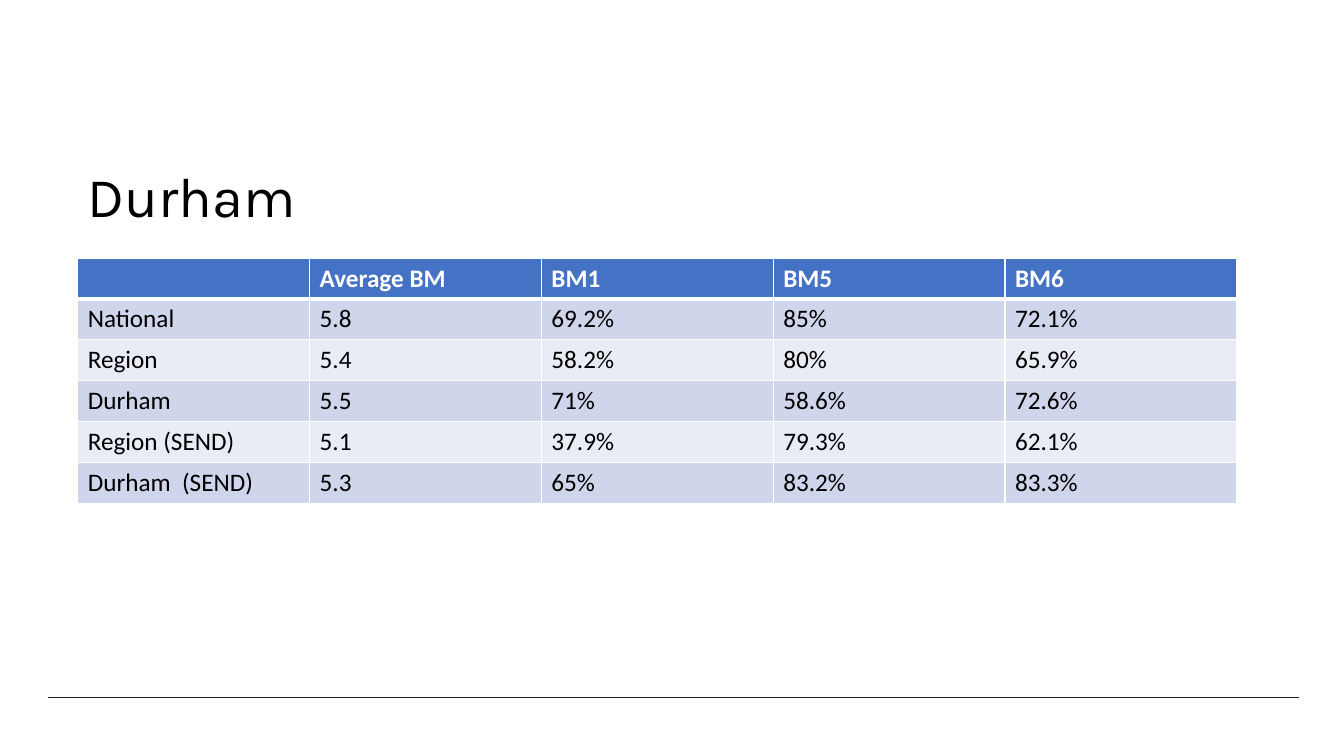
from lxml.etree import SubElement
from pptx import Presentation
from pptx.dml.color import RGBColor
from pptx.enum.shapes import MSO_CONNECTOR as Connector
from pptx.enum.text import MSO_ANCHOR as Anchor, PP_ALIGN as Align
from pptx.oxml.ns import qn
from pptx.util import Cm, Pt

BLACK = RGBColor(0x00, 0x00, 0x00)
WHITE = RGBColor(0xFF, 0xFF, 0xFF)
RULE = RGBColor(0x23, 0x1F, 0x20)
HEADER_FILL = RGBColor(0x44, 0x72, 0xC4)
BAND_FILLS = (RGBColor(0xE9, 0xEB, 0xF5), RGBColor(0xCF, 0xD5, 0xEA))

LEFT, CONTENT_WIDTH = Cm(1.96), Cm(29.21)
ROW_HEIGHT = Cm(1.03)

RESULTS = (
    ("", "Average BM", "BM1", "BM5", "BM6"),
    ("National", "5.8", "69.2%", "85%", "72.1%"),
    ("Region", "5.4", "58.2%", "80%", "65.9%"),
    ("Durham", "5.5", "71%", "58.6%", "72.6%"),
    ("Region (SEND)", "5.1", "37.9%", "79.3%", "62.1%"),
    ("Durham  (SEND)", "5.3", "65%", "83.2%", "83.3%"),
)


def set_font(font, name, size, color, bold=False):
    font.name = name
    font.size = Pt(size)
    font.color.rgb = color
    font.bold = bold


def add_footer_rule(slide):
    top = Cm(17.58)
    rule = slide.shapes.add_connector(
        Connector.STRAIGHT, Cm(1.22), top, Cm(32.74), top)
    rule.line.color.rgb = RULE
    rule.line.width = Pt(0.5)
    SubElement(rule._element.spPr, qn("a:effectLst"))


def format_title(slide, text):
    title = slide.shapes.title
    title.left, title.top = LEFT, Cm(3.78)
    title.width, title.height = CONTENT_WIDTH, Cm(2.13)
    frame = title.text_frame
    frame.text = text
    frame.vertical_anchor = Anchor.BOTTOM
    paragraph = frame.paragraphs[0]
    paragraph.alignment = Align.LEFT
    paragraph.line_spacing = 0.9
    set_font(paragraph.font, "Karla", 40, BLACK)


def set_borders(cell, widths):
    properties = cell._tc.get_or_add_tcPr()
    for side, width in widths.items():
        line = SubElement(properties, qn(f"a:ln{side}"), w=str(Pt(width)))
        fill = SubElement(line, qn("a:solidFill"))
        SubElement(fill, qn("a:srgbClr"), val=str(WHITE))


def format_cell(cell, text, row):
    is_header = row == 0
    set_borders(cell, {"L": 1, "R": 1, "T": 3 if row == 1 else 1,
                       "B": 3 if is_header else 1})
    cell.fill.solid()
    cell.fill.fore_color.rgb = HEADER_FILL if is_header else BAND_FILLS[row % 2]
    cell.text = text
    set_font(cell.text_frame.paragraphs[0].font, "Calibri", 18,
             WHITE if is_header else BLACK, is_header)


def add_results_table(slide, rows):
    table = slide.shapes.add_table(
        len(rows), len(rows[0]), LEFT, Cm(6.5),
        CONTENT_WIDTH, ROW_HEIGHT * len(rows)).table
    for row, values in enumerate(rows):
        for column, text in enumerate(values):
            format_cell(table.cell(row, column), text, row)


def main():
    presentation = Presentation()
    presentation.slide_width, presentation.slide_height = Cm(33.87), Cm(19.05)
    slide = presentation.slides.add_slide(presentation.slide_layouts[5])
    add_footer_rule(slide)
    format_title(slide, "Durham")
    add_results_table(slide, RESULTS)
    presentation.save("out.pptx")


if __name__ == "__main__":
    main()
